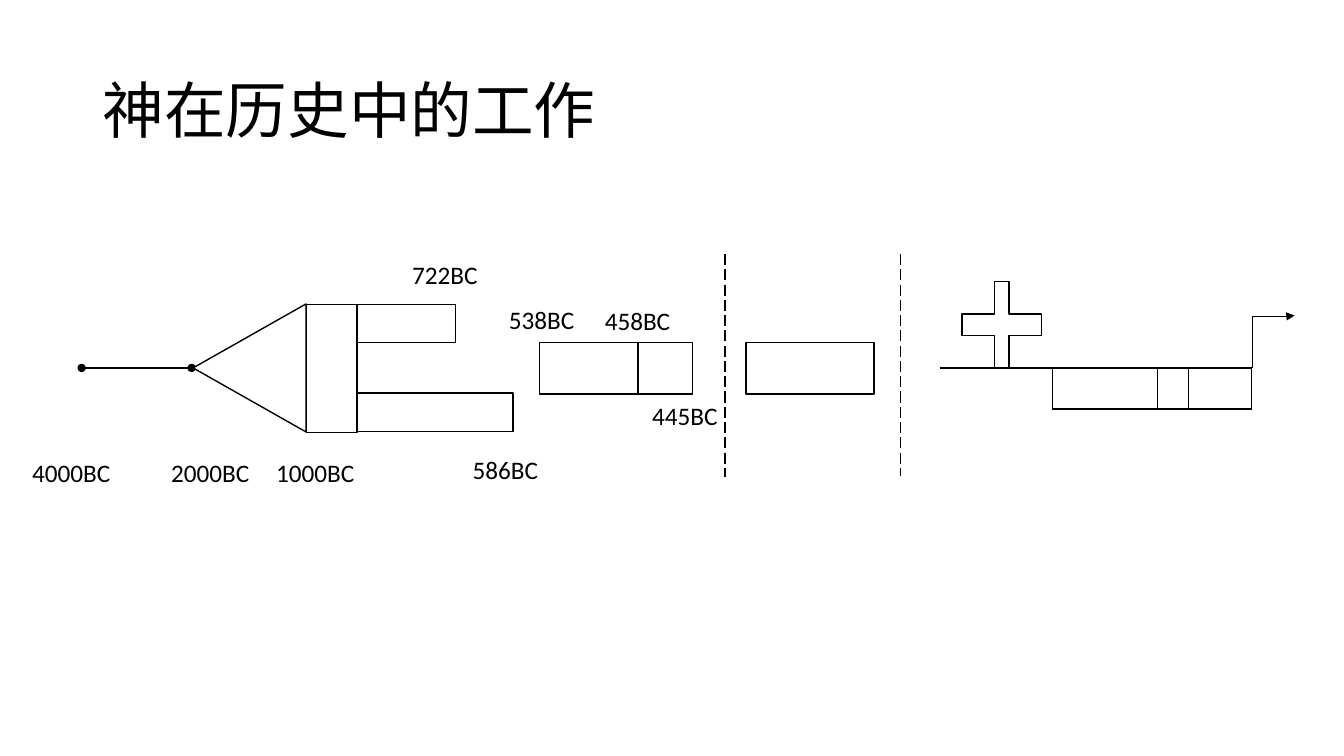
from dataclasses import dataclass

from lxml.etree import SubElement
from pptx import Presentation
from pptx.dml.color import RGBColor
from pptx.enum.dml import MSO_LINE_DASH_STYLE as Dash
from pptx.enum.shapes import MSO_AUTO_SHAPE_TYPE as Geo, MSO_CONNECTOR_TYPE as Conn
from pptx.enum.text import MSO_ANCHOR as Anchor, MSO_AUTO_SIZE as AutoSize
from pptx.oxml.ns import qn
from pptx.shapes.autoshape import Shape
from pptx.shapes.connector import Connector
from pptx.slide import Slide
from pptx.util import Emu, Pt

EMU_PER_PX = 9144
BLACK = RGBColor(0x00, 0x00, 0x00)
WHITE = RGBColor(0xFF, 0xFF, 0xFF)
FONT = "Calibri"
AXIS_Y = 365
LABEL_W, LABEL_H = 104, 40


@dataclass(frozen=True)
class Block:
    x: int
    y: int
    w: int
    h: int
    geo: Geo = Geo.RECTANGLE
    rotation: int = 0
    adj: float | None = None


@dataclass(frozen=True)
class Line:
    x1: int
    y1: int
    x2: int
    y2: int
    dash: Dash | None = None
    head: str | None = None
    tail: str | None = None
    kind: Conn = Conn.STRAIGHT


@dataclass(frozen=True)
class Label:
    text: str
    x: int
    y: int


LINES = [
    Line(81, AXIS_Y, 190, AXIS_Y, head="oval", tail="oval"),
    Line(719, 252, 719, 473, dash=Dash.LONG_DASH),
    Line(893, 252, 893, 472, dash=Dash.LONG_DASH),
    Line(932, AXIS_Y, 1242, AXIS_Y),
]
TURN = Line(1237, 318, 1289, 360, tail="triangle", kind=Conn.ELBOW)

BLOCKS = [
    Block(184, 309, 127, 112, Geo.ISOSCELES_TRIANGLE, rotation=270),
    Block(304, 302, 50, 127),
    Block(354, 302, 98, 38),
    Block(354, 390, 155, 38),
    Block(535, 340, 98, 51),
    Block(633, 340, 54, 51),
    Block(740, 340, 127, 51),
    Block(954, 279, 79, 86, Geo.CROSS, adj=0.41),
    Block(1044, AXIS_Y, 106, 41),
    Block(1148, AXIS_Y, 31, 41),
    Block(1179, AXIS_Y, 62, 41),
]

LABELS = [
    Label("4000BC", 22, 449),
    Label("2000BC", 160, 449),
    Label("1000BC", 264, 449),
    Label("722BC", 399, 252),
    Label("586BC", 459, 446),
    Label("538BC", 495, 297),
    Label("458BC", 590, 298),
    Label("445BC", 637, 392),
]


def px(n: int) -> Emu:
    """Turn px into EMU."""
    return Emu(n * EMU_PER_PX)


def add_block(slide: Slide, block: Block) -> Shape:
    """Draw a white block with a thin black outline."""
    s = slide.shapes.add_shape(block.geo, px(block.x), px(block.y), px(block.w), px(block.h))
    s.shadow.inherit = False
    s.fill.solid()
    s.fill.fore_color.rgb = WHITE
    s.line.color.rgb = BLACK
    s.line.width = Pt(1)
    s.rotation = block.rotation
    if block.adj is not None:
        s.adjustments[0] = block.adj
    return s


def add_line(slide: Slide, line: Line) -> Connector:
    """Draw a thin black connector with its dash and line ends."""
    s = slide.shapes.add_connector(line.kind, px(line.x1), px(line.y1), px(line.x2), px(line.y2))
    s.line.color.rgb = BLACK
    s.line.width = Pt(1)
    if line.dash is not None:
        s.line.dash_style = line.dash
    props = s.element.spPr
    for tag, end in (("a:headEnd", line.head), ("a:tailEnd", line.tail)):
        if end:
            SubElement(props.find(qn("a:ln")), qn(tag)).set("type", end)
    SubElement(props, qn("a:effectLst"))
    return s


def add_turn(slide: Slide, line: Line) -> None:
    """Draw an elbow that rises first and then points right."""
    props = add_line(slide, line).element.spPr
    props.find(qn("a:xfrm")).set("rot", "16200000")
    guide = SubElement(props.find(qn("a:prstGeom")).find(qn("a:avLst")), qn("a:gd"))
    guide.set("name", "adj1")
    guide.set("fmla", "val 98500")


def add_text(slide: Slide, text: str, x: int, y: int, w: int, h: int, size: int) -> Shape:
    """Add a wrapped text box in black."""
    s = slide.shapes.add_textbox(px(x), px(y), px(w), px(h))
    tf = s.text_frame
    tf.word_wrap = True
    tf.text = text
    font = tf.paragraphs[0].runs[0].font
    font.name = FONT
    font.size = Pt(size)
    font.color.rgb = BLACK
    return s


def main() -> None:
    """Build the timeline slide."""
    prs = Presentation()
    prs.slide_width, prs.slide_height = px(1333), px(750)
    slide = prs.slides.add_slide(prs.slide_layouts[6])
    tf = add_text(slide, "神在历史中的工作", 92, 40, 1150, 145, 44).text_frame
    tf.vertical_anchor = Anchor.MIDDLE
    tf.paragraphs[0].line_spacing = 0.9
    for line in LINES:
        add_line(slide, line)
    for block in BLOCKS:
        add_block(slide, block)
    add_turn(slide, TURN)
    for label in LABELS:
        s = add_text(slide, label.text, label.x, label.y, LABEL_W, LABEL_H, 18)
        s.text_frame.auto_size = AutoSize.SHAPE_TO_FIT_TEXT
    prs.save("out.pptx")


if __name__ == "__main__":
    main()
